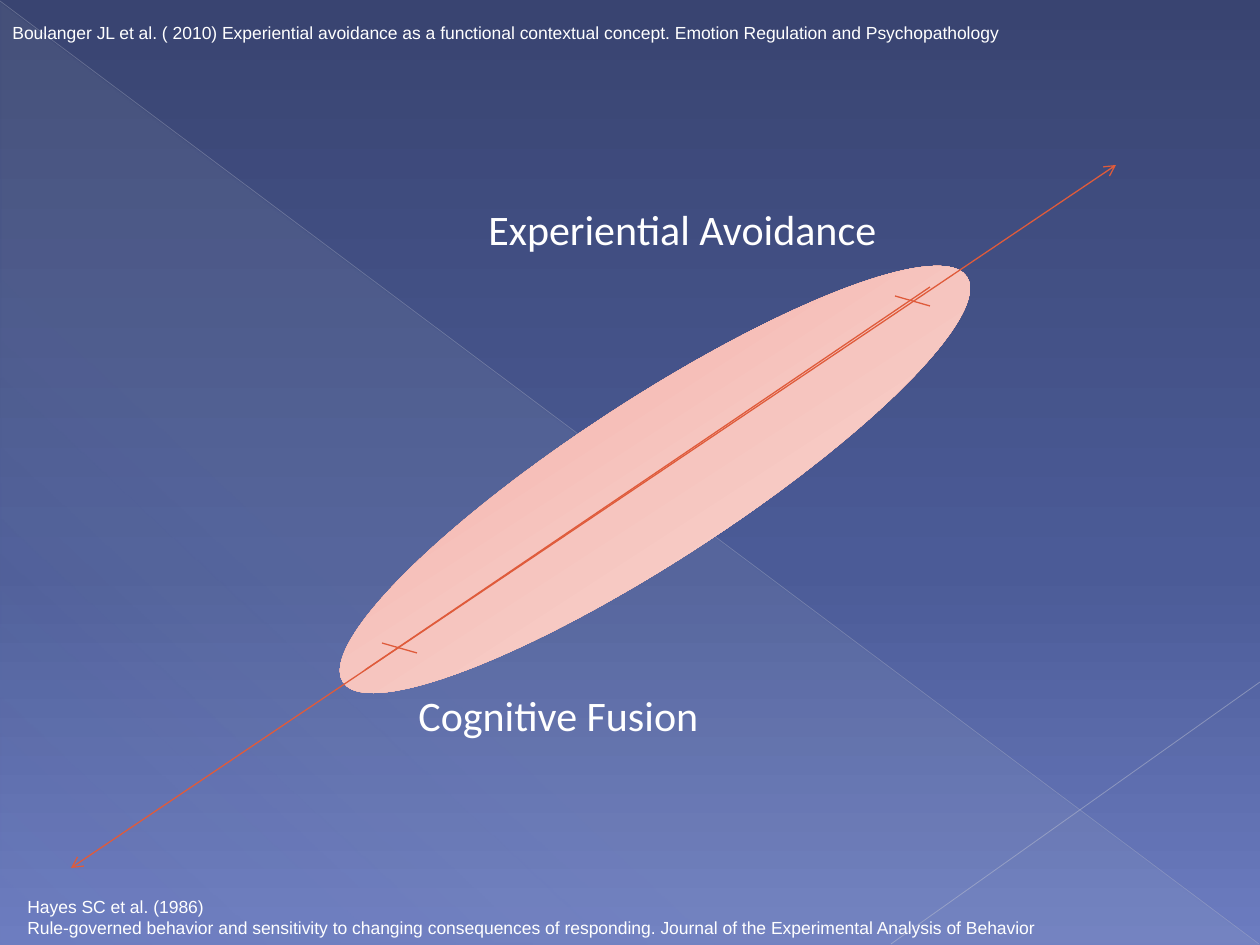
"""Build the slide on experiential avoidance and cognitive fusion."""
from lxml import etree
from pptx import Presentation
from pptx.dml.color import RGBColor
from pptx.enum.shapes import MSO_CONNECTOR, MSO_SHAPE
from pptx.enum.text import MSO_AUTO_SIZE
from pptx.oxml import parse_xml
from pptx.oxml.ns import nsdecls, qn
from pptx.util import Emu, Pt

STRAIGHT = MSO_CONNECTOR.STRAIGHT
TRIANGLE, ELLIPSE = MSO_SHAPE.RIGHT_TRIANGLE, MSO_SHAPE.OVAL
GROW = MSO_AUTO_SIZE.SHAPE_TO_FIT_TEXT

THEME = {
    "text": "FFFFFF",
    "axis": ("DF5B3B", 0.75, 100),
    "diagonal": ("BABECD", 0.39, 35),
    "corner": ("C2C5D2", 0.47, 45),
    "label": ("Calibri", 24),
    "source": ("Arial", 10),
    "sky": ([(0, "394471", 100), (60, "4B5B97", 100), (100, "6C7CC0", 100)], 90),
    "veil": ([(0, "C5D1D7", 10), (70, "C5D1D7", 8), (100, "C5D1D7", 1)], 133),
    "overlap": ([(0, "F4A095", 100), (50, "F6C5BF", 100), (100, "FAE2E0", 100)], 90),
}

SHAPES = [
    (TRIANGLE, (1, 3, 1258, 942), 0, "veil"),
    (ELLIPSE, (283, 399, 744, 161), -33, "overlap"),
]
BACK_LINES = [
    ((0, 1), (1259, 944), "diagonal", False),
    ((1260, 682), (891, 944), "corner", False),
]
AXIS_LINES = [
    ((71, 868), (1116, 165), "axis", True),
    ((895, 296), (930, 306), "axis", False),
    ((382, 643), (417, 653), "axis", False),
    ((365, 670), (930, 287), "axis", False),
]
TEXTS = [
    (["Cognitive Fusion"], (406, 683, 309, 63), "label", False),
    (["Experiential Avoidance"], (476, 197, 418, 63), "label", False),
    (["Hayes SC et al. (1986)",
      "Rule-governed behavior and sensitivity to changing consequences of responding. "
      "Journal of the Experimental Analysis of Behavior"],
     (15, 890, 1275, 55), "source", True),
    (["Boulanger JL et al. ( 2010) Experiential avoidance as a functional contextual "
      "concept. Emotion Regulation and Psychopathology"],
     (0, 16, 1181, 34), "source", True),
]


def px(n):
    return Emu(round(n * 914400 / 126))


def set_gradient(fill, element, name):
    stops, angle = THEME[name]
    fill.solid()
    old = element.xpath(".//a:solidFill")[0]
    gs = "".join(
        f'<a:gs pos="{pos * 1000}"><a:srgbClr val="{color}">'
        f'<a:alpha val="{alpha * 1000}"/></a:srgbClr></a:gs>'
        for pos, color, alpha in stops)
    grad = parse_xml(
        f'<a:gradFill {nsdecls("a")} rotWithShape="1"><a:gsLst>{gs}</a:gsLst>'
        f'<a:lin ang="{angle * 60000}" scaled="0"/></a:gradFill>')
    old.getparent().replace(old, grad)


def add_shape(s, kind, box, rotation, gradient):
    sp = s.shapes.add_shape(kind, *map(px, box))
    sp.rotation = rotation
    sp.shadow.inherit = False
    sp.line.fill.background()
    set_gradient(sp.fill, sp.element.spPr, gradient)


def add_line(s, start, end, style, arrows):
    color, width, alpha = THEME[style]
    cx = s.shapes.add_connector(STRAIGHT, *map(px, start + end))
    cx.line.color.rgb = RGBColor.from_string(color)
    cx.line.width = Pt(width)
    spPr = cx.element.spPr
    if alpha < 100:
        clr = spPr.xpath(".//a:srgbClr")[0]
        etree.SubElement(clr, qn("a:alpha"), val=str(alpha * 1000))
    if arrows:
        ln = spPr.find(qn("a:ln"))
        for tag in ("a:headEnd", "a:tailEnd"):
            etree.SubElement(ln, qn(tag), type="arrow")
    etree.SubElement(spPr, qn("a:effectLst"))


def add_text(s, lines, box, style, wrap):
    font, size = THEME[style]
    tf = s.shapes.add_textbox(*map(px, box)).text_frame
    tf.word_wrap = wrap
    tf.auto_size = GROW
    for i, line in enumerate(lines):
        p = tf.add_paragraph() if i else tf.paragraphs[0]
        r = p.add_run()
        r.text = line
        r.font.name = font
        r.font.size = Pt(size)
        r.font.color.rgb = RGBColor.from_string(THEME["text"])


def main():
    prs = Presentation()
    prs.slide_width, prs.slide_height = px(1260), px(945)
    s = prs.slides.add_slide(prs.slide_layouts[6])
    set_gradient(s.background.fill, s.element, "sky")
    veil, overlap = SHAPES
    add_shape(s, *veil)
    for line in BACK_LINES:
        add_line(s, *line)
    add_shape(s, *overlap)
    for line in AXIS_LINES:
        add_line(s, *line)
    for text in TEXTS:
        add_text(s, *text)
    prs.save("out.pptx")


if __name__ == "__main__":
    main()
